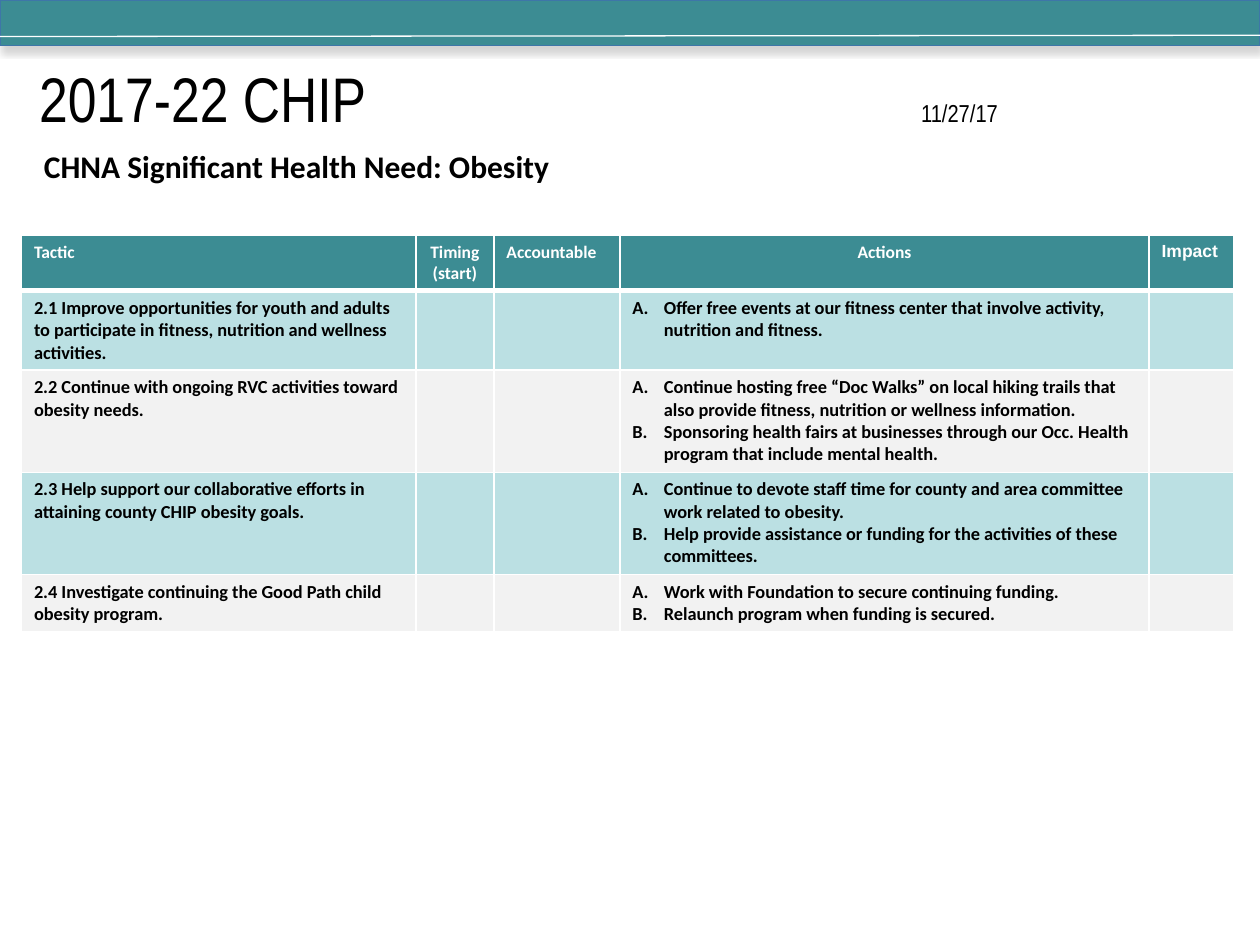
from lxml import etree
from pptx import Presentation
from pptx import util as u
from pptx.dml.color import RGBColor
from pptx.enum import shapes, text
from pptx.oxml import parse_xml
from pptx.oxml.ns import nsdecls, qn

HEX = {"teal": "3C8C93", "edge": "3E76A8", "mint": "BBE0E3",
       "gray": "F2F2F2", "white": "FFFFFF", "black": "000000"}
WIDE, HIGH = 10, 7.5
COLS = [3.13, 0.62, 1, 4.2, 0.67]
ROWS = [0.43, 0.63, 0.81, 0.81, 0.45]
HEADS = ["Tactic", "Timing (start)", "Accountable", "Actions", "Impact"]
PLANS = [
    ("2.1 Improve opportunities for youth and adults to participate in "
     "fitness, nutrition and wellness activities.",
     ["Offer free events at our fitness center that involve activity, "
      "nutrition and fitness."]),
    ("2.2 Continue with ongoing RVC activities toward obesity needs.",
     ["Continue hosting free “Doc Walks” on local hiking trails that also "
      "provide fitness, nutrition or wellness information.",
      "Sponsoring health fairs at businesses through our Occ. Health "
      "program that include mental health."]),
    ("2.3 Help support our collaborative efforts in attaining county CHIP "
     "obesity goals.",
     ["Continue to devote staff time for county and area committee work "
      "related to obesity.",
      "Help provide assistance or funding for the activities of these "
      "committees."]),
    ("2.4 Investigate continuing the Good Path child obesity program.",
     ["Work with Foundation to secure continuing funding.",
      "Relaunch program when funding is secured."]),
]


def rgb(name):
    return RGBColor.from_string(HEX[name])


def box(x, y, w, h):
    return [u.Inches(n) for n in (x, y, w, h)]


def add_run(para, words, size, font="Calibri", color="black", bold=True):
    run = para.add_run()
    run.text = words
    run.font.size, run.font.name, run.font.bold = u.Pt(size), font, bold
    run.font.color.rgb = rgb(color)


def add_band(slide):
    band = slide.shapes.add_shape(shapes.MSO_SHAPE.RECTANGLE,
                                  *box(0, 0, WIDE, 0.36))
    band.fill.solid()
    band.fill.fore_color.rgb = rgb("teal")
    band.line.color.rgb = rgb("edge")
    band.line.width = u.Pt(0.75)
    # Soft shadow below the band
    band.shadow.inherit = False
    glow = band._element.spPr.find(qn("a:effectLst"))
    glow.append(parse_xml(
        f'<a:outerShdw {nsdecls("a")} blurRad="{u.Pt(4)}" dist="{u.Pt(3)}" '
        f'dir="5400000" rotWithShape="0"><a:srgbClr val="{HEX["black"]}">'
        '<a:alpha val="16000"/></a:srgbClr></a:outerShdw>'))


def add_rule(slide):
    rule = slide.shapes.add_connector(shapes.MSO_CONNECTOR.STRAIGHT,
                                      *box(0, 0.29, WIDE, 0.28))
    rule.line.color.rgb = rgb("white")
    rule.line.width = u.Pt(0.75)
    etree.SubElement(rule._element.spPr, qn("a:effectLst"))


def set_title(slide):
    title = slide.shapes.title
    title.left, title.top, title.width, title.height = box(0.21, 0.5, 9.57, 0.54)
    frame = title.text_frame
    frame.auto_size = text.MSO_AUTO_SIZE.NONE
    frame.vertical_anchor = text.MSO_ANCHOR.MIDDLE
    para = frame.paragraphs[0]
    para.alignment = text.PP_ALIGN.LEFT
    # One tab stop places the date
    tabs = etree.SubElement(para._p.get_or_add_pPr(), qn("a:tabLst"))
    etree.SubElement(tabs, qn("a:tab"), pos=str(u.Inches(7)), algn="l")
    add_run(para, "2017-22 CHIP\t", 36, "Arial Narrow", bold=False)
    add_run(para, "11/27/17", 14, "Arial Narrow", bold=False)


def add_need(slide):
    need = slide.shapes.add_textbox(*box(0.25, 1.12, 4.25, 0.71))
    need.text_frame.word_wrap = False
    add_run(need.text_frame.paragraphs[0],
            "CHNA Significant Health Need: Obesity", 18)


def style_cell(cell, color, base=1):
    cell.fill.solid()
    cell.fill.fore_color.rgb = rgb(color)
    props = cell._tc.get_or_add_tcPr()
    for spot, side in enumerate("LRTB"):
        wide = base if side == "B" else 1
        props.insert(spot, parse_xml(
            f'<a:ln{side} {nsdecls("a")} w="{u.Pt(wide)}"><a:solidFill>'
            f'<a:srgbClr val="{HEX["white"]}"/></a:solidFill></a:ln{side}>'))


def fill_list(cell, items):
    for spot, item in enumerate(items):
        frame = cell.text_frame
        para = frame.add_paragraph() if spot else frame.paragraphs[0]
        props = para._p.get_or_add_pPr()
        props.set("marL", str(u.Inches(0.25)))
        props.set("indent", str(u.Inches(-0.25)))
        etree.SubElement(props, qn("a:buFont"), typeface="+mj-lt")
        etree.SubElement(props, qn("a:buAutoNum"), type="alphaUcPeriod")
        add_run(para, item, 10.5)


def add_plan(slide):
    frame = slide.shapes.add_table(len(ROWS), len(COLS),
                                   *box(0.17, 1.87, sum(COLS), sum(ROWS)))
    table = frame.table
    for col, wide in zip(table.columns, COLS):
        col.width = u.Inches(wide)
    for row, high in zip(table.rows, ROWS):
        row.height = u.Inches(high)
    # Header row
    for cell, head in zip(table.rows[0].cells, HEADS):
        style_cell(cell, "teal", 3)
        para = cell.text_frame.paragraphs[0]
        if head in ("Timing (start)", "Actions"):
            para.alignment = text.PP_ALIGN.CENTER
        font = "Arial" if head == "Impact" else "Calibri"
        add_run(para, head, 10, font, "white")
    # Tactic rows in alternating colours
    for spot, (tactic, items) in enumerate(PLANS):
        cells = list(table.rows[spot + 1].cells)
        for cell in cells:
            style_cell(cell, "gray" if spot % 2 else "mint")
        add_run(cells[0].text_frame.paragraphs[0], tactic, 10.5)
        fill_list(cells[3], items)


def main():
    deck = Presentation()
    deck.slide_width, deck.slide_height = u.Inches(WIDE), u.Inches(HIGH)
    slide = deck.slides.add_slide(deck.slide_layouts[5])
    add_band(slide)
    add_rule(slide)
    set_title(slide)
    add_plan(slide)
    add_need(slide)
    deck.save("out.pptx")


if __name__ == "__main__":
    main()
